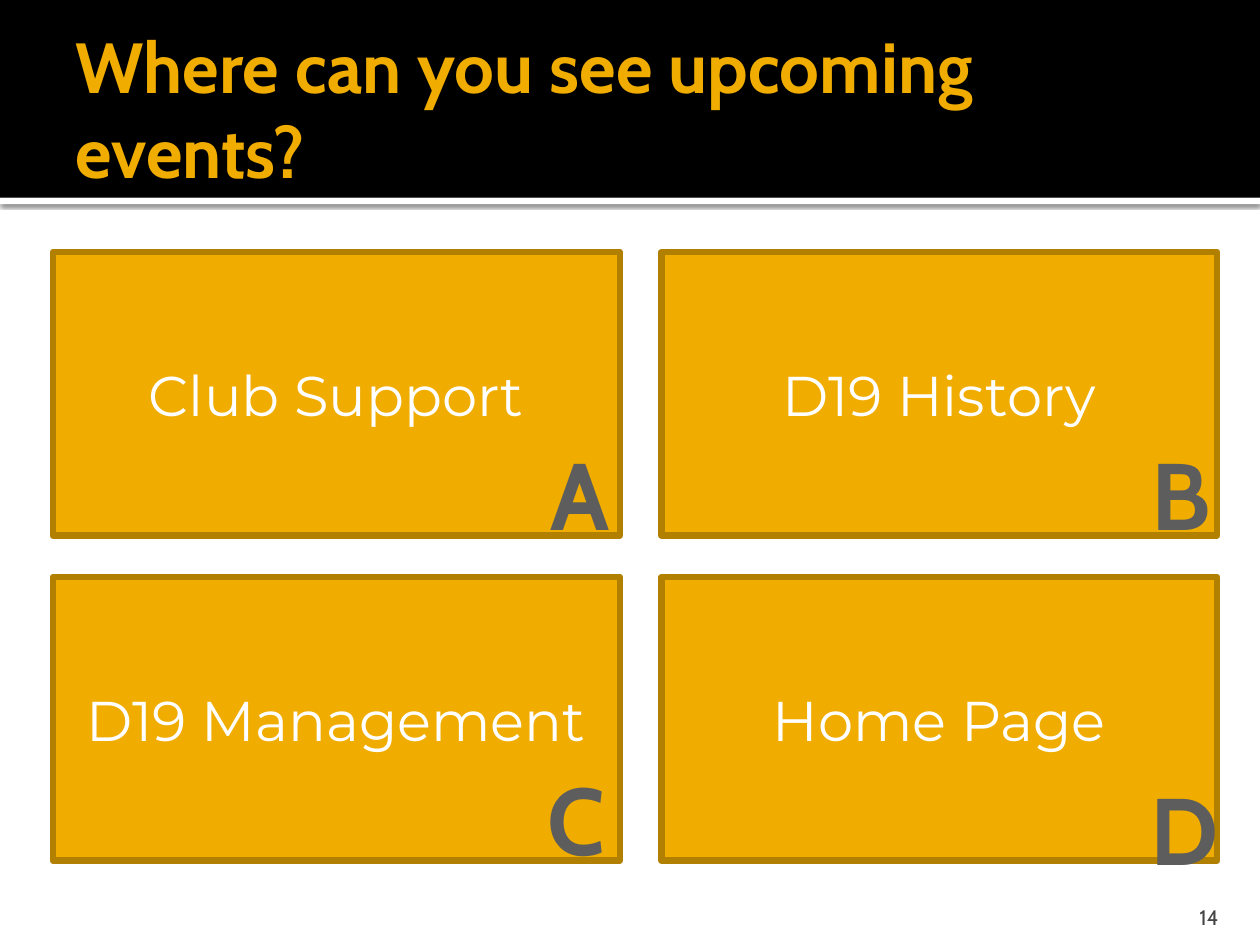
from lxml import etree
from pptx import Presentation
from pptx.dml.color import RGBColor
from pptx.enum.shapes import MSO_SHAPE as Shape
from pptx.enum.text import MSO_ANCHOR as Anchor, PP_ALIGN as Align
from pptx.oxml.ns import qn
from pptx.util import Inches, Pt

COLORS = {
    "black": "000000",
    "white": "FFFFFF",
    "gold": "F0AD00",
    "dark_gold": "B28000",
    "letter": "5D5D5D",
    "number": "454545",
}
HEADING_FONT = "Cabin"
BODY_FONT = "Montserrat"

# Answer grid: (left, width) of columns, top of rows
COLUMNS = [(0.42, 4.5), (5.25, 4.41)]
ROWS = [2, 4.58]
CARD_HEIGHT = 2.25
ANSWERS = ["Club Support", "D19 History", "D19 Management", "Home Page"]
# Letter with the left, top and width of its box
LETTERS = [
    ("A", 4.25, 3.41, 0.7),
    ("B", 9.04, 3.41, 0.67),
    ("C", 4.25, 5.99, 0.64),
    ("D", 9.03, 6.07, 0.72),
]


def color(name):
    return RGBColor.from_string(COLORS[name])


def write(shape, text, size, font, color_name, align=Align.LEFT,
          anchor=Anchor.MIDDLE, bold=False, wrap=True):
    frame = shape.text_frame
    frame.word_wrap = wrap
    frame.vertical_anchor = anchor
    paragraph = frame.paragraphs[0]
    paragraph.text = text
    paragraph.alignment = align
    paragraph.font.size = Pt(size)
    paragraph.font.name = font
    paragraph.font.bold = bold
    paragraph.font.color.rgb = color(color_name)
    return frame


def add_rectangle(slide, left, top, width, height, fill):
    shape = slide.shapes.add_shape(
        Shape.RECTANGLE, Inches(left), Inches(top), Inches(width), Inches(height))
    shape.shadow.inherit = False
    shape.fill.solid()
    shape.fill.fore_color.rgb = color(fill)
    shape.line.fill.background()
    return shape


def add_text(slide, left, top, width, height, *content, **style):
    box = slide.shapes.add_textbox(
        Inches(left), Inches(top), Inches(width), Inches(height))
    return write(box, *content, **style)


def add_shadow(shape):
    effects = shape._element.spPr.find(qn("a:effectLst"))
    shadow = etree.SubElement(
        effects, qn("a:outerShdw"), blurRad=str(Pt(2.5)), dist=str(Pt(0.8)),
        dir="5400000", algn="tl", rotWithShape="0")
    shade = etree.SubElement(shadow, qn("a:srgbClr"), val=COLORS["black"])
    etree.SubElement(shade, qn("a:alpha"), val="60000")


def add_card(slide, left, top, width, text):
    card = add_rectangle(slide, left, top, width, CARD_HEIGHT, "gold")
    card.line.color.rgb = color("dark_gold")
    card.line.width = Pt(3.78)
    etree.SubElement(card.line._get_or_add_ln(), qn("a:round"))
    write(card, text, 32, BODY_FONT, "white", align=Align.CENTER)


def main():
    presentation = Presentation()
    presentation.slide_width = Inches(10)
    presentation.slide_height = Inches(7.5)
    slide = presentation.slides.add_slide(presentation.slide_layouts[6])

    # Header band with title
    add_shadow(add_rectangle(slide, 0, 1.57, 10, 0.05, "white"))
    add_rectangle(slide, 0, 0, 10, 1.57, "black")
    title = add_text(slide, 0.5, 0.17, 9, 1.37, "Where can you see upcoming events?",
                     40.5, HEADING_FONT, "gold", bold=True)
    title.margin_right = Inches(0.05)

    # Answer cards
    cells = [(left, top, width) for top in ROWS for left, width in COLUMNS]
    for cell, answer in zip(cells, ANSWERS):
        add_card(slide, *cell, answer)

    # Answer letters
    for letter, left, top, width in LETTERS:
        add_text(slide, left, top, width, 1.01, letter, 54, HEADING_FONT, "letter",
                 align=Align.CENTER, anchor=Anchor.TOP, bold=True, wrap=False)

    # Slide number
    number = add_text(slide, 8.97, 7.08, 0.8, 0.3, "14", 12, HEADING_FONT, "number",
                      align=Align.RIGHT, anchor=Anchor.BOTTOM)
    number.margin_bottom = 0

    presentation.save("out.pptx")


if __name__ == "__main__":
    main()
